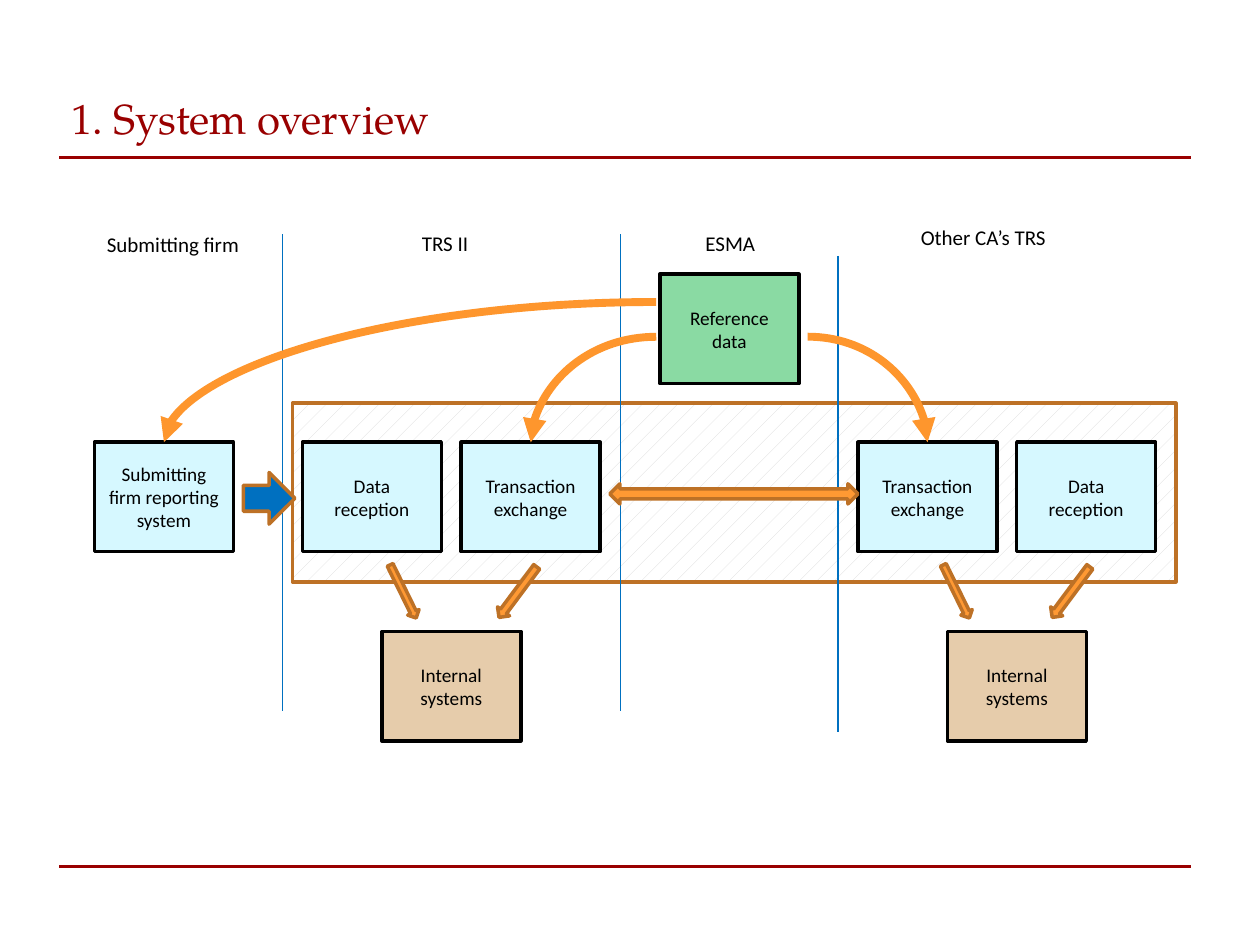
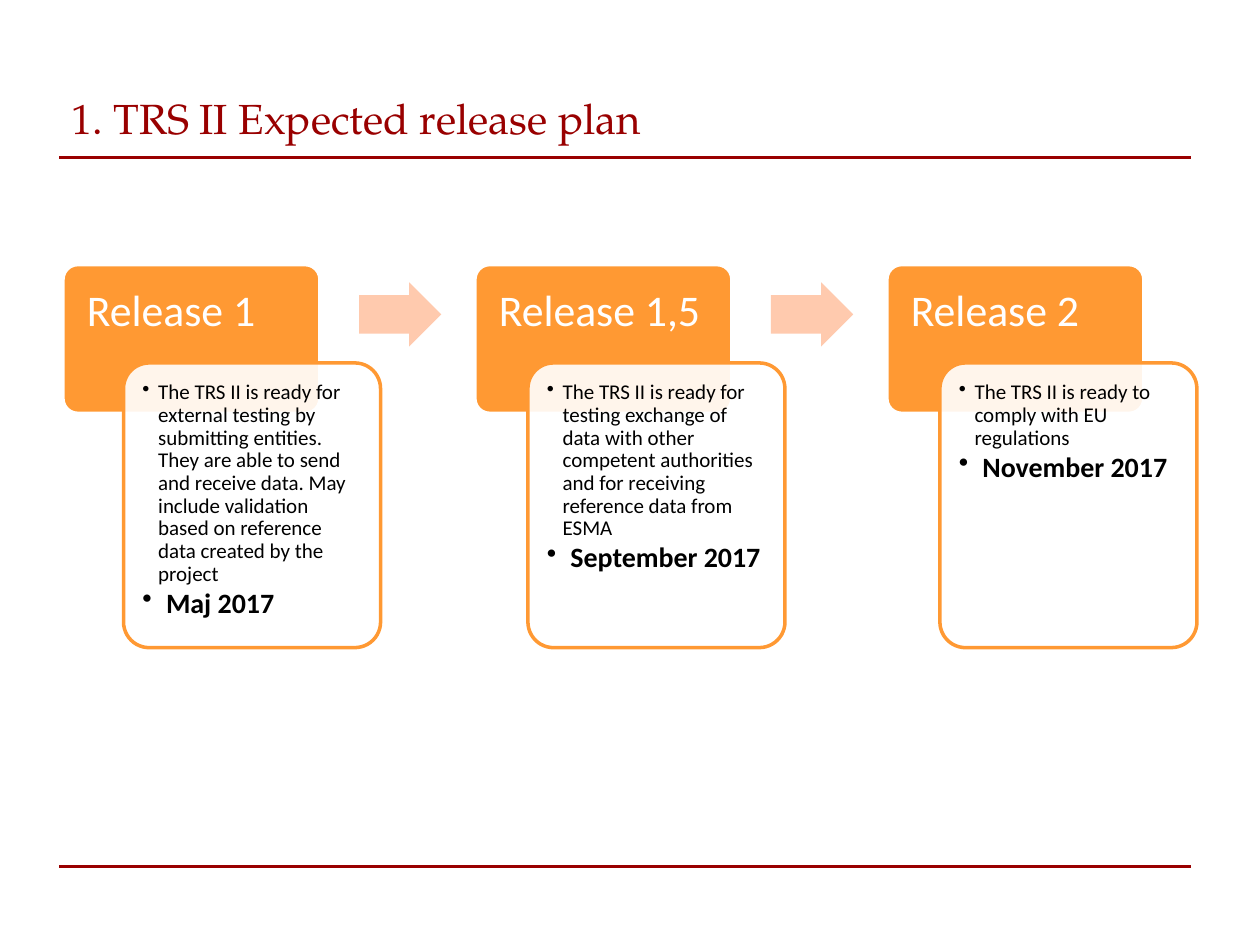
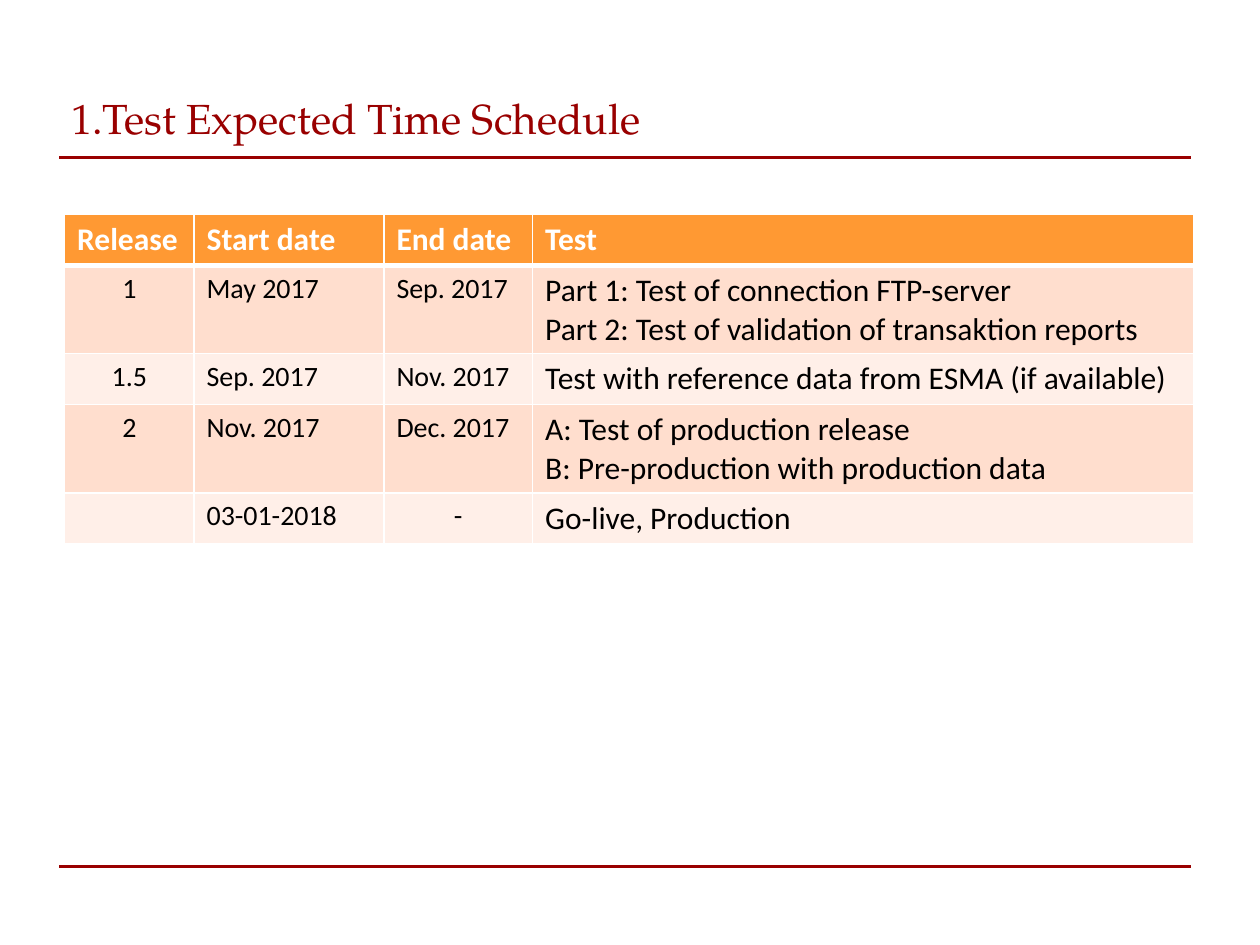
from lxml.etree import SubElement
from pptx import Presentation
from pptx.dml.color import RGBColor
from pptx.enum.dml import MSO_PATTERN
from pptx.enum.shapes import MSO_CONNECTOR as Link, MSO_SHAPE as Kind, MSO_SHAPE_TYPE
from pptx.enum.text import MSO_ANCHOR as Anchor, PP_ALIGN as Align
from pptx.oxml.ns import qn
from pptx.util import Pt


class Theme:
    heading_font = "TeX Gyre Pagella"
    body_font = "Calibri"
    title_size = 24
    release_size = 25
    large_size = 18
    date_size = 16
    text_size = 12
    box_size = 11
    rule = RGBColor.from_string("990000")
    black = RGBColor.from_string("000000")
    white = RGBColor.from_string("FFFFFF")
    orange = RGBColor.from_string("FF9933")
    curve = RGBColor.from_string("FE962D")
    brown = RGBColor.from_string("BD7126")
    blue = RGBColor.from_string("0070C0")
    cyan = RGBColor.from_string("D6F8FF")
    green = RGBColor.from_string("8ADAA3")
    tan = RGBColor.from_string("E6CCAB")
    hatch = RGBColor.from_string("D9D9D9")
    peach = RGBColor.from_string("FFCAAE")
    bands = [RGBColor.from_string("FFDECE"), RGBColor.from_string("FFEFE8")]


def write(frame, text, size=Theme.text_size, color=Theme.black, font=Theme.body_font,
          bold=False, align=Align.LEFT, spacing=None, after=None, bullet_indent=None):
    for line in text.split("\n"):
        para = frame.add_paragraph() if frame.text else frame.paragraphs[0]
        para.alignment = align
        if spacing:
            para.line_spacing = spacing
        if after:
            para.space_after = Pt(after)
        if bullet_indent:
            props = para._p.get_or_add_pPr()
            props.set("marL", str(Pt(bullet_indent)))
            props.set("indent", str(-Pt(bullet_indent)))
            SubElement(props, qn("a:buChar")).set("char", "•")
        span = para.add_run()
        span.text = line
        span.font.size = Pt(size)
        span.font.color.rgb = color
        span.font.name = font
        span.font.bold = bold


def add_block(page, kind, left, top, width, height, fill=None, line=None, rotation=0):
    place = [Pt(value) for value in (left, top, width, height)]
    if kind is None:
        box = page.shapes.add_textbox(*place)
        box.text_frame.word_wrap = True
        return box
    box = page.shapes.add_shape(kind, *place)
    box.shadow.inherit = False
    box.rotation = rotation
    if fill is not None:
        box.fill.solid()
        box.fill.fore_color.rgb = fill
    if line is None:
        box.line.fill.background()
    else:
        box.line.color.rgb = line
        box.line.width = Pt(2)
    return box


deck = Presentation()
deck.slide_width, deck.slide_height = Pt(720), Pt(540)

titles = ["1. System overview", "1. TRS II Expected release plan", "1.Test Expected Time Schedule"]
for title in titles:
    page = deck.slides.add_slide(deck.slide_layouts[6])
    for height in (90, 495.2):
        rule = page.shapes.add_connector(Link.STRAIGHT, Pt(34), Pt(height), Pt(680.4), Pt(height))
        rule.line.color.rgb = Theme.rule
        rule.line.width = Pt(1.25)
    box = add_block(page, None, 33.8, 42.5, 648, 49.7)
    box.text_frame.vertical_anchor = Anchor.MIDDLE
    write(box.text_frame, title, size=Theme.title_size, color=Theme.rule, font=Theme.heading_font)

overview, plan, schedule = deck.slides

exchange_area = add_block(overview, Kind.RECTANGLE, 167.2, 230.4, 504.7, 102.2, line=Theme.brown)
exchange_area.fill.patterned()
exchange_area.fill.pattern = MSO_PATTERN.PERCENT_5
exchange_area.fill.fore_color.rgb = Theme.hatch
exchange_area.fill.back_color.rgb = Theme.white

for left, top, bottom in [(161.5, 133.9, 406.1), (354.4, 133.9, 406.1), (478.8, 146.2, 418.3)]:
    divider = overview.shapes.add_connector(Link.STRAIGHT, Pt(left), Pt(top), Pt(left), Pt(bottom))
    divider.line.color.rgb = Theme.blue
    divider.line.width = Pt(0.75)

lanes = [("Submitting firm", 54, 129, 90.7), ("TRS II", 234, 128.2, 41),
         ("ESMA", 396, 128.2, 43.2), ("Other CA’s TRS", 519.1, 124.6, 87.1)]
for text, left, top, width in lanes:
    box = add_block(overview, None, left, top, width, 21.8)
    box.text_frame.word_wrap = False
    write(box.text_frame, text)

system_top, internal_top = 252.7, 360.9
systems = [
    ("Submitting firm reporting system", 54, system_top, Theme.cyan),
    ("Data reception", 172.8, system_top, Theme.cyan),
    ("Transaction exchange", 263.5, system_top, Theme.cyan),
    ("Reference data", 377.1, 156.7, Theme.green),
    ("Internal systems", 218.2, internal_top, Theme.tan),
    ("Transaction\nexchange", 490.3, system_top, Theme.cyan),
    ("Data reception", 581, system_top, Theme.cyan),
    ("Internal systems", 541.4, internal_top, Theme.tan),
]
for text, left, top, fill in systems:
    box = add_block(overview, Kind.RECTANGLE, left, top, 79.4, 62.6, fill, Theme.black)
    box.text_frame.word_wrap = True
    box.text_frame.vertical_anchor = Anchor.MIDDLE
    write(box.text_frame, text, size=Theme.box_size, align=Align.CENTER)

curves = [((93.7, 252.7), (375, 172.6), True), ((303.3, 252.7), (375, 192.4), True),
          ((461.5, 192.4), (530, 252.7), False)]
for begin, end, turned in curves:
    points = [Pt(value) for value in begin + end]
    curve = overview.shapes.add_connector(Link.CURVE, *points)
    curve.line.color.rgb = Theme.curve
    curve.line.width = Pt(4.5)
    SubElement(curve.line._get_or_add_ln(), qn("a:tailEnd")).set("type", "triangle")
    props = curve._element.spPr
    props.find(qn("a:prstGeom")).set("prst", "curvedConnector2")
    if turned:
        props.find(qn("a:xfrm")).set("rot", "10800000")

add_block(overview, Kind.DOWN_ARROW, 139, 270, 29.5, 29.5, Theme.blue, Theme.brown, 270)
for shift in (0, 316.1):
    add_block(overview, Kind.DOWN_ARROW, 226.8, 321.1, 7.2, 33.8, Theme.orange, Theme.brown, 333.9)\
        .left = Pt(226.8 + shift)
    add_block(overview, Kind.DOWN_ARROW, 291.6 + shift, 320.4, 8.6, 36, Theme.orange, Theme.brown, 36.7)
add_block(overview, Kind.LEFT_RIGHT_ARROW, 348.5, 276.5, 141.8, 11.5, Theme.orange, Theme.brown)

releases = [
    ("Release 1", 70.6, "The TRS II is ready for external testing by submitting entities. They are able to "
     "send and receive data. May include validation based on reference data created by the project",
     "Maj 2017"),
    ("Release 1,5", 301.7, "The TRS II is ready for testing exchange of data with other competent "
     "authorities and for receiving reference data from ESMA", "September 2017"),
    ("Release 2", 537.1, "The TRS II is ready to comply with EU regulations", "November 2017"),
]
release_step = 235.4
for index, (name, card_left, goal, date) in enumerate(releases):
    left = 36 + index * release_step
    header = add_block(plan, Kind.ROUNDED_RECTANGLE, left, 151.2, 146.9, 85, Theme.orange, Theme.white)
    header.adjustments[0] = 0.1
    label = add_block(plan, None, left, 151.2, 146.9, 56.9).text_frame
    label.margin_left = label.margin_top = label.margin_right = Pt(13.7)
    label.margin_bottom = Pt(7.2)
    write(label, name, size=Theme.release_size, color=Theme.white, spacing=0.9)

    card = add_block(plan, Kind.ROUNDED_RECTANGLE, card_left, 207.4, 146.9, 162.7,
                     Theme.white, Theme.orange)
    card.adjustments[0] = 0.1
    color = card._element.spPr.find(qn("a:solidFill")).find(qn("a:srgbClr"))
    SubElement(color, qn("a:alpha")).set("val", "90000")
    details = add_block(plan, None, card_left + 4.3, 211.7, 138.2, 154.1).text_frame
    details.margin_left = details.margin_top = Pt(6.5)
    details.margin_right = details.margin_bottom = Pt(6.5)
    write(details, goal, spacing=0.9, after=1.8, bullet_indent=9)
    write(details, date, size=Theme.date_size, bold=True, spacing=0.9, after=2.4, bullet_indent=13.5)

    if index < len(releases) - 1:
        arrow = add_block(plan, Kind.RIGHT_ARROW, left + 169.2, 161.3, 47, 36.7, Theme.peach)
        arrow.adjustments[0] = 0.6

rows = [
    ("Release", "Start date", "End date", "Test"),
    ("1", "May 2017", "Sep. 2017",
     "Part 1: Test of connection FTP-server\nPart 2: Test of validation of transaktion reports"),
    ("1.5", "Sep. 2017", "Nov. 2017", "Test with reference data from ESMA (if available)"),
    ("2", "Nov. 2017", "Dec. 2017",
     "A: Test of production release\nB: Pre-production with production data"),
    ("", "03-01-2018", "-", "Go-live, Production"),
]
widths = [74, 108.5, 85, 378]
table = schedule.shapes.add_table(len(rows), len(widths), Pt(36.9), Pt(122.4),
                                  Pt(sum(widths)), Pt(29.2 * len(rows))).table
table.horz_banding = False
for column, width in zip(table.columns, widths):
    column.width = Pt(width)
for row_index, row in enumerate(rows):
    table.rows[row_index].height = Pt(29.2)
    is_header = row_index == 0
    for column_index, text in enumerate(row):
        cell = table.cell(row_index, column_index)
        weights = {"lnL": 1, "lnR": 1, "lnT": 3 if row_index == 1 else 1, "lnB": 3 if is_header else 1}
        for edge, weight in weights.items():
            border = SubElement(cell._tc.get_or_add_tcPr(), qn("a:" + edge))
            border.set("w", str(Pt(weight)))
            paint = SubElement(border, qn("a:solidFill"))
            SubElement(paint, qn("a:srgbClr")).set("val", str(Theme.white))
        cell.fill.solid()
        cell.fill.fore_color.rgb = Theme.orange if is_header else Theme.bands[(row_index - 1) % 2]
        is_centred = text == "-" or (column_index == 0 and not is_header)
        is_large = is_header or column_index == 3
        if text:
            write(cell.text_frame, text, bold=is_header,
                  size=Theme.large_size if is_large else Theme.date_size,
                  color=Theme.white if is_header else Theme.black,
                  align=Align.CENTER if is_centred else Align.LEFT)

for page in deck.slides:
    for shape in page.shapes:
        if shape.shape_type == MSO_SHAPE_TYPE.LINE:
            SubElement(shape._element.spPr, qn("a:effectLst"))

deck.save("out.pptx")
